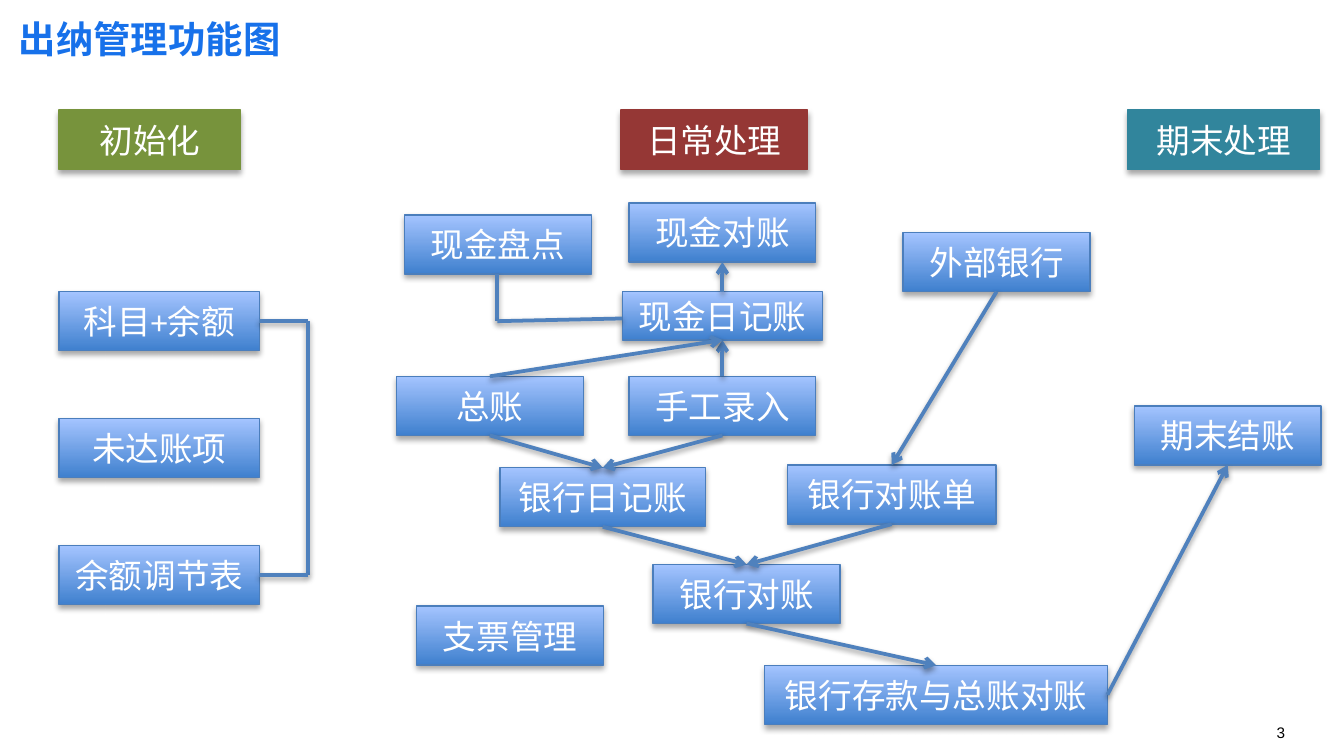
from lxml import etree
from pptx import Presentation
from pptx.dml.color import RGBColor
from pptx.enum.shapes import MSO_CONNECTOR, MSO_SHAPE
from pptx.enum.text import MSO_ANCHOR, PP_ALIGN
from pptx.oxml.ns import qn
from pptx.util import Inches, Pt

RECT = MSO_SHAPE.RECTANGLE
STRAIGHT = MSO_CONNECTOR.STRAIGHT
LEFT, CENTER = PP_ALIGN.LEFT, PP_ALIGN.CENTER
TOP, MIDDLE = MSO_ANCHOR.TOP, MSO_ANCHOR.MIDDLE

TITLE_BLUE = RGBColor(0x17, 0x71, 0xEA)
GREEN = RGBColor(0x77, 0x93, 0x3C)
RED = RGBColor(0x95, 0x37, 0x35)
TEAL = RGBColor(0x31, 0x85, 0x9C)
NODE_DARK = RGBColor(0x3F, 0x80, 0xCE)
NODE_LIGHT = RGBColor(0xA4, 0xC4, 0xFF)
NODE_LINE = RGBColor(0x4B, 0x7E, 0xBC)
LINK_BLUE = RGBColor(0x4F, 0x81, 0xBD)
WHITE = RGBColor(0xFF, 0xFF, 0xFF)
BLACK = RGBColor(0, 0, 0)

TITLE_FONT = "Noto Sans CJK SC"
SLIDE_W = 10
NODE_W, NODE_H = 1.39, 0.44
# Connection sites of a rectangle
SITE_TOP, SITE_LEFT, SITE_BOTTOM, SITE_RIGHT = range(4)


def add_shadow(effects, distance, opacity):
    """Fill an effect list with a soft black shadow falling straight down."""
    shadow = etree.SubElement(effects, qn("a:outerShdw"), blurRad=str(Pt(3.1)),
                              dist=str(Pt(distance)), dir="5400000", rotWithShape="0")
    color = etree.SubElement(shadow, qn("a:srgbClr"), val=str(BLACK))
    etree.SubElement(color, qn("a:alpha"), val=str(opacity * 1000))


def add_node(slide, text, left, top, width=NODE_W, height=NODE_H, color=None):
    """Add a labelled box, in the blue gradient unless a colour is given."""
    s = slide.shapes.add_shape(RECT, Inches(left), Inches(top), Inches(width), Inches(height))
    if color is None:
        s.fill.gradient()
        s.fill.gradient_angle = 90
        for stop, stop_color in zip(s.fill.gradient_stops, (NODE_DARK, NODE_LIGHT)):
            stop.color.rgb = stop_color
    else:
        s.fill.solid()
        s.fill.fore_color.rgb = color
    s.line.color.rgb = color or NODE_LINE
    s.line.width = Pt(0.75)
    s.shadow.inherit = False
    add_shadow(s._element.spPr.find(qn("a:effectLst")), 1.8, 35)
    tf = s.text_frame
    tf.word_wrap = True
    tf.vertical_anchor = MIDDLE
    tf.text = text
    p = tf.paragraphs[0]
    p.alignment = CENTER
    r = p.runs[0]
    r.font.name = "Calibri"
    r.font.size = Pt(18)
    r.font.color.rgb = WHITE
    return s


def add_line(slide, start=(0, 0), end=(0, 0), arrow=False):
    points = [Inches(v) for v in (*start, *end)]
    c = slide.shapes.add_connector(STRAIGHT, *points)
    c.line.color.rgb = LINK_BLUE
    c.line.width = Pt(2)
    if arrow:
        etree.SubElement(c.line._get_or_add_ln(), qn("a:tailEnd"), type="arrow")
    add_shadow(etree.SubElement(c._element.spPr, qn("a:effectLst")), 1.6, 38)
    return c


def link(slide, source, target, begin=SITE_BOTTOM, end=SITE_TOP):
    """Join two boxes with an arrow glued to their edges."""
    c = add_line(slide, arrow=True)
    c.begin_connect(source, begin)
    c.end_connect(target, end)


def add_title(slide, left, top, width, height):
    title = slide.shapes.title
    title.left, title.top = Inches(left), Inches(top)
    title.width, title.height = Inches(width), Inches(height)
    tf = title.text_frame
    tf.margin_left = tf.margin_right = tf.margin_top = tf.margin_bottom = 0
    tf.vertical_anchor = TOP
    tf.text = "出纳管理功能图"
    p = tf.paragraphs[0]
    p.alignment = LEFT
    r = p.runs[0]
    r.font.size = Pt(20)
    r.font.bold = True
    r.font.color.rgb = TITLE_BLUE
    r.font.name = TITLE_FONT
    etree.SubElement(r._r.get_or_add_rPr(), qn("a:ea"), typeface=TITLE_FONT)


def add_headers(slide, left, top):
    for text, x, width, color in (
        ("初始化", 0, 1.35, GREEN),
        ("日常处理", 4.18, 1.39, RED),
        ("期末处理", 7.95, 1.43, TEAL),
    ):
        add_node(slide, text, left + x, top, width, color=color)


def add_setup(slide, left, top, width, height):
    """Stack the opening steps and bracket the first with the last."""
    steps = ("科目+余额", "未达账项", "余额调节表")
    pitch = (height - NODE_H) / (len(steps) - 1)
    for i, text in enumerate(steps):
        add_node(slide, text, left, top + i * pitch, width)
    right, bar = left + width, left + width + 0.36
    first, last = top + NODE_H / 2, top + height - NODE_H / 2
    add_line(slide, (right, first), (bar, first))
    add_line(slide, (bar, first), (bar, last))
    add_line(slide, (right, last), (bar, last))


def add_daily_flow(slide, left, top):
    """Draw the daily and closing steps with the arrows between them."""
    nodes = {
        text: add_node(slide, text, left + x, top + y, *size)
        for text, x, y, *size in (
            ("现金盘点", 0.06, 0.09),
            ("现金对账", 1.73, 0),
            ("现金日记账", 1.68, 0.66, 1.49, 0.36),
            ("总账", 0, 1.29),
            ("手工录入", 1.73, 1.29),
            ("银行日记账", 0.77, 1.97, 1.53),
            ("支票管理", 0.15, 3),
            ("银行对账", 1.91, 2.69),
            ("银行对账单", 2.91, 1.95, 1.55),
            ("外部银行", 3.77, 0.22),
            ("银行存款与总账对账", 2.74, 3.44, 2.55),
            ("期末结账", 5.49, 1.51),
        )
    }
    corner = (left + 0.75, top + 0.88)
    add_line(slide, (left + 0.75, top + 0.53), corner)
    add_line(slide, corner, (left + 1.68, top + 0.86))
    for source, target, *sites in (
        ("现金日记账", "现金对账", SITE_TOP, SITE_BOTTOM),
        ("手工录入", "现金日记账", SITE_TOP, SITE_BOTTOM),
        ("总账", "银行日记账"),
        ("手工录入", "银行日记账"),
        ("银行日记账", "银行对账"),
        ("银行对账单", "银行对账"),
        ("外部银行", "银行对账单"),
        ("银行对账", "银行存款与总账对账"),
        ("银行存款与总账对账", "期末结账", SITE_RIGHT, SITE_BOTTOM),
        ("总账", "现金日记账", SITE_TOP, SITE_BOTTOM),
    ):
        link(slide, nodes[source], nodes[target], *sites)


def add_page_number(slide, left, top, width, height):
    s = slide.shapes.add_textbox(Inches(left), Inches(top), Inches(width), Inches(height))
    tf = s.text_frame
    tf.margin_left = tf.margin_right = tf.margin_top = tf.margin_bottom = 0
    tf.word_wrap = True
    tf.vertical_anchor = MIDDLE
    tf.text = "3"
    r = tf.paragraphs[0].runs[0]
    r.font.name = "Arial"
    r.font.size = Pt(8.2)
    r.font.color.rgb = BLACK


def main():
    prs = Presentation()
    prs.slide_width, prs.slide_height = Inches(SLIDE_W), Inches(SLIDE_W * 9 / 16)
    slide = prs.slides.add_slide(prs.slide_layouts[5])
    add_title(slide, 0.14, 0.12, 9.19, 0.57)
    add_headers(slide, 0.44, 0.82)
    add_setup(slide, 0.44, 2.17, 1.49, 2.33)
    add_daily_flow(slide, 2.95, 1.51)
    add_page_number(slide, 9.5, 5.38, 0.5, 0.14)
    prs.save("out.pptx")


if __name__ == "__main__":
    main()
